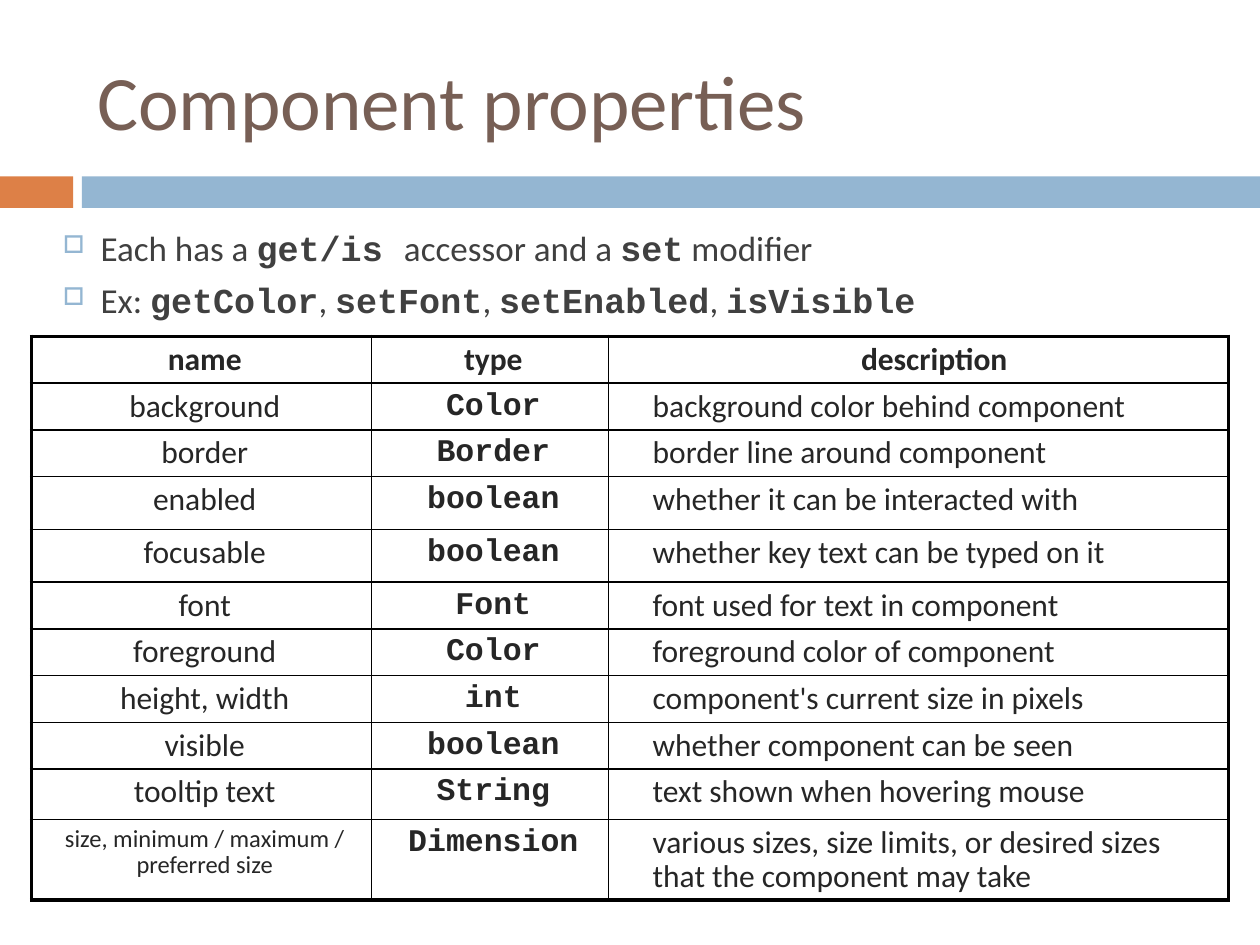
from lxml import etree
from pptx import Presentation
from pptx.dml.color import RGBColor
from pptx.enum.shapes import MSO_SHAPE
from pptx.enum.text import MSO_ANCHOR, PP_ALIGN
from pptx.oxml.ns import qn
from pptx.util import Inches, Pt

RECTANGLE = MSO_SHAPE.RECTANGLE
MIDDLE = MSO_ANCHOR.MIDDLE
LEFT, CENTER = PP_ALIGN.LEFT, PP_ALIGN.CENTER

ORANGE = RGBColor(0xDD, 0x80, 0x47)
BLUE = RGBColor(0x94, 0xB6, 0xD2)
BROWN = RGBColor(0x77, 0x5F, 0x55)
DARK_GRAY = RGBColor(0x40, 0x40, 0x40)
NEAR_BLACK = RGBColor(0x26, 0x26, 0x26)
BLACK = RGBColor(0, 0, 0)

TITLE_ONLY = 5
THIN, THICK = Pt(1), Pt(2.25)

# Each bullet is a list of (text, is code) pieces.
BULLETS = [
    [("Each has a ", False), ("get/is ", True), ("accessor and a ", False),
     ("set", True), (" modifier", False)],
    [("Ex: ", False), ("getColor", True), (", ", False), ("setFont", True),
     (", ", False), ("setEnabled", True), (", ", False), ("isVisible", True)],
]

PROPERTIES = [
    ("name", "type", "description"),
    ("background", "Color", "background color behind component"),
    ("border", "Border", "border line around component"),
    ("enabled", "boolean", "whether it can be interacted with"),
    ("focusable", "boolean", "whether key text can be typed on it"),
    ("font", "Font", "font used for text in component"),
    ("foreground", "Color", "foreground color of component"),
    ("height, width", "int", "component's current size in pixels"),
    ("visible", "boolean", "whether component can be seen"),
    ("tooltip text", "String", "text shown when hovering mouse"),
    ("size, minimum / maximum / preferred size", "Dimension",
     "various sizes, size limits, or desired sizes that the component may take"),
]
COLUMN_WIDTHS = [2.7, 1.88, 4.92]
ROW_HEIGHTS = [0.36, 0.36, 0.36, 0.42, 0.42, 0.36, 0.36, 0.37, 0.37, 0.4, 0.36]


def style_font(font, size, color, name, bold=False):
    font.size = Pt(size)
    font.color.rgb = color
    font.name = name
    font.bold = bold


def set_indent(paragraph, margin, first_line=0):
    properties = paragraph._p.get_or_add_pPr()
    properties.set("marL", str(Inches(margin)))
    properties.set("indent", str(Inches(first_line)))
    return properties


def add_solid_fill(parent, color):
    fill = etree.SubElement(parent, qn("a:solidFill"))
    etree.SubElement(fill, qn("a:srgbClr"), val=str(color))


class SlideBuilder:
    text_font = "Calibri"
    code_font = "Courier New"

    def __init__(self, presentation):
        self.slide = presentation.slides.add_slide(
            presentation.slide_layouts[TITLE_ONLY])

    def band(self, left, width, color):
        shape = self.slide.shapes.add_shape(
            RECTANGLE, Inches(left), Inches(1.4), Inches(width), Inches(0.25))
        shape.shadow.inherit = False
        shape.fill.solid()
        shape.fill.fore_color.rgb = color
        shape.line.fill.background()

    def title(self, text):
        title = self.slide.shapes.title
        title.left, title.top = Inches(0.67), Inches(0.25)
        title.width, title.height = Inches(8.92), Inches(1.08)
        title.text_frame.text = text
        title.text_frame.vertical_anchor = MIDDLE
        paragraph = title.text_frame.paragraphs[0]
        paragraph.alignment = LEFT
        style_font(paragraph.font, 44, BROWN, self.text_font)

    def bullets(self, items):
        box = self.slide.shapes.add_textbox(
            Inches(0), Inches(1.75), Inches(10), Inches(0.9))
        frame = box.text_frame
        frame.word_wrap = True
        for index, pieces in enumerate(items):
            paragraph = frame.add_paragraph() if index else frame.paragraphs[0]
            paragraph.space_before = Pt(5.5)
            properties = set_indent(paragraph, 0.7, -0.3)
            bullet_color = etree.SubElement(properties, qn("a:buClr"))
            etree.SubElement(bullet_color, qn("a:srgbClr"), val=str(BLUE))
            etree.SubElement(properties, qn("a:buSzPct"), val="70000")
            etree.SubElement(properties, qn("a:buChar"), char="□")
            for text, is_code in pieces:
                run = paragraph.add_run()
                run.text = text
                name = self.code_font if is_code else self.text_font
                style_font(run.font, 20, DARK_GRAY, name, is_code)

    def table(self, rows):
        last_row, last_column = len(rows) - 1, len(COLUMN_WIDTHS) - 1
        table = self.slide.shapes.add_table(
            len(rows), len(COLUMN_WIDTHS), Inches(0.25), Inches(2.67),
            Inches(sum(COLUMN_WIDTHS)), Inches(sum(ROW_HEIGHTS))).table
        table.first_row = table.horz_banding = False
        for column, width in zip(table.columns, COLUMN_WIDTHS):
            column.width = Inches(width)
        for row, height in zip(table.rows, ROW_HEIGHTS):
            row.height = Inches(height)
        for r, texts in enumerate(rows):
            for c, text in enumerate(texts):
                cell = table.cell(r, c)
                self.cell_text(cell, text, is_header=r == 0,
                               is_code=r > 0 and c == 1,
                               is_description=c == last_column,
                               size=14 if (r, c) == (last_row, 0) else 18)
                self.cell_borders(cell, {
                    "a:lnL": c == 0, "a:lnR": c == last_column,
                    "a:lnT": r == 0, "a:lnB": r == last_row})
                cell.fill.background()

    def cell_text(self, cell, text, is_header, is_code, is_description, size):
        cell.text = text
        paragraph = cell.text_frame.paragraphs[0]
        paragraph.alignment = LEFT if is_description and not is_header else CENTER
        paragraph.line_spacing = 0.9
        paragraph.space_before = Pt(0.2 * size)
        set_indent(paragraph, 0.25 if is_description else 0.05)
        name = self.code_font if is_code else self.text_font
        style_font(paragraph.font, size, NEAR_BLACK, name, is_header or is_code)

    def cell_borders(self, cell, outer_sides):
        """Draw every side, thick where it lies on the table's outer edge."""
        properties = cell._tc.get_or_add_tcPr()
        for tag, is_outer in outer_sides.items():
            width = THICK if is_outer else THIN
            line = etree.SubElement(properties, qn(tag), w=str(width))
            add_solid_fill(line, BLACK)


def main():
    presentation = Presentation()
    presentation.slide_width = Inches(10)
    presentation.slide_height = Inches(7.5)
    builder = SlideBuilder(presentation)
    builder.band(0, 0.58, ORANGE)
    builder.band(0.65, 9.35, BLUE)
    builder.title("Component properties")
    builder.bullets(BULLETS)
    builder.table(PROPERTIES)
    presentation.save("out.pptx")


if __name__ == "__main__":
    main()
